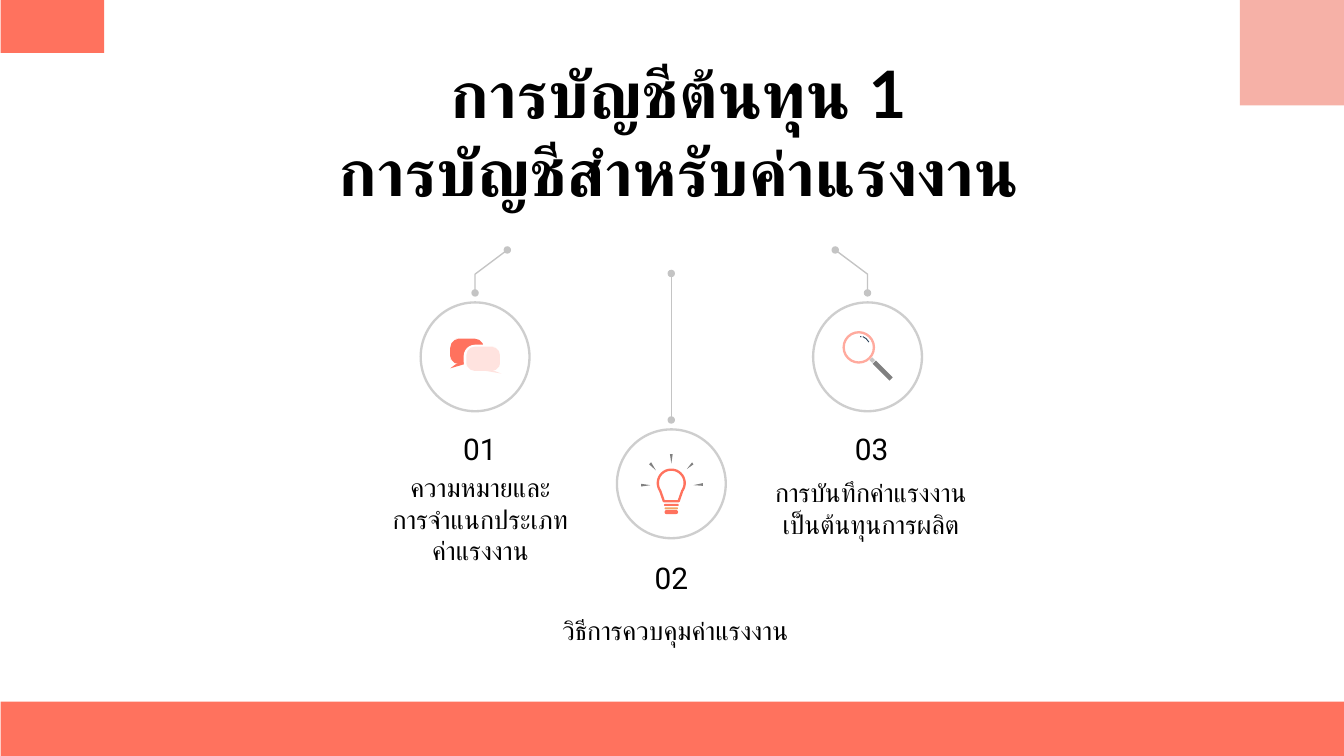
"""Build the labour-cost accounting title slide with its three numbered topics."""
import math
from lxml import etree
from pptx import Presentation
from pptx import util as u
from pptx.dml.color import RGBColor
from pptx.enum import shapes, text
from pptx.oxml.ns import qn

COLORS = {
    "coral": "FF725E", "blush": "F6B1A7", "pale": "FFE3DF", "rose": "FFAA9E",
    "amber": "F2A365", "ring": "CECECE", "leader": "C4C4C4", "gray": "808080",
    "navy": "30475E", "white": "FFFFFF", "black": "000000",
}
RGB = {name: RGBColor.from_string(value) for name, value in COLORS.items()}
KIND = shapes.MSO_SHAPE

prs = Presentation()
prs.slide_width = u.Inches(10)
prs.slide_height = prs.slide_width * 9 // 16
s = prs.slides.add_slide(prs.slide_layouts[6])
CELL = prs.slide_width / 1000


def grid(*cells):
    return [round(c * CELL) for c in cells]


def paint(sp, fill=None, line=None, width=1):
    sp.shadow.inherit = False
    if fill:
        sp.fill.solid()
        sp.fill.fore_color.rgb = RGB[fill]
    else:
        sp.fill.background()
    if line:
        sp.line.color.rgb = RGB[line]
        sp.line.width = u.Pt(width)
    else:
        sp.line.fill.background()
    return sp


for box, color in [
    ((0.5, 522, 1000, 40.5), "coral"),
    ((0.5, -0.5, 77, 40), "coral"),
    ((922.5, -0.5, 77.5, 79), "blush"),
]:
    paint(s.shapes.add_shape(KIND.RECTANGLE, *grid(*box)), color)

for box, words, font, size, bold in [
    ((82, 48, 846, 100), "การบัญชีต้นทุน 1\nการบัญชีสำหรับค่าแรงงาน", "Lato", 35, True),
    ((403, 415, 193, 29), "02", "Roboto", 16, False),
    ((406, 449.5, 193, 39), "วิธีการควบคุมค่าแรงงาน", "Roboto", 14, False),
    ((260.5, 319, 193, 29), "01", "Roboto", 16, False),
    ((261, 366.5, 193, 39), "ความหมายและ\nการจำแนกประเภทค่าแรงงาน", "Roboto", 14, False),
    ((552, 319, 193, 29), "03", "Roboto", 16, False),
    ((551.5, 358.5, 193, 39), "การบันทึกค่าแรงงานเป็นต้นทุนการผลิต", "Roboto", 14, False),
]:
    tf = s.shapes.add_textbox(*grid(*box)).text_frame
    tf.word_wrap = True
    tf.vertical_anchor = text.MSO_ANCHOR.MIDDLE
    tf.margin_left = tf.margin_right = tf.margin_top = tf.margin_bottom = u.Inches(0.1)
    p = tf.paragraphs[0]
    p.text = words
    p.alignment = text.PP_ALIGN.CENTER
    p.font.name, p.font.size, p.font.bold = font, u.Pt(size), bold
    p.font.color.rgb = RGB["black"]

lines = [
    ((648, 267), (650, 269), "leader", 2),
    ((650.5, 269.5), (663, 282), "gray", 2.5),
]
outlines = [
    ([(642, 250.5), (644.5, 252), (646.5, 254.5)], False, None, "navy", 0.5),
]
for i, (top, side) in enumerate([(224, 1), (318.5, 0), (224, -1)]):
    x = 353.5 + 146 * i
    paint(s.shapes.add_shape(KIND.OVAL, *grid(x - 40.5, top + 1, 81, 81)), "white", "ring", 1.25)
    start, end = (x + 24 * side, 186 if side else 203.5), (x, top - 6)
    for dot_x, dot_y in (start, end):
        paint(s.shapes.add_shape(KIND.OVAL, *grid(dot_x - 2.75, dot_y - 2.75, 5.5, 5.5)), "leader")
    if side:
        outlines.append(([start, (x, 204), end], False, None, "leader", 0.75))
    else:
        lines.append((start, end, "leader", 0.75))

bulb = [
    (499.5 + 10 * math.cos(math.radians(a)), 359.5 + 10 * math.sin(math.radians(a)))
    for a in range(145, 396, 10)
]
outlines.append((bulb + [(505, 373), (494, 373)], True, None, "coral", 1.25))
for ray in [
    [(498.5, 338), (500.5, 338), (499.5, 345)],
    [(483, 345.5), (484.5, 344), (488, 350)],
    [(477, 360), (477, 362), (484, 361)],
    [(523, 359.5), (523, 361.5), (516, 361)],
    [(515, 344), (516, 345.5), (511, 349)],
]:
    outlines.append((ray, True, "gray", None, 0))

for points, closed, fill, line, width in outlines:
    points = [grid(*point) for point in points]
    fb = s.shapes.build_freeform(*points[0])
    fb.add_line_segments(points[1:], close=closed)
    paint(fb.convert_to_shape(), fill, line, width)

for start, end, color, width in lines:
    sp = s.shapes.add_connector(shapes.MSO_CONNECTOR.STRAIGHT, *grid(*start, *end))
    sp.line.color.rgb = RGB[color]
    sp.line.width = u.Pt(width)
    etree.SubElement(sp._element.spPr, qn("a:effectLst"))

for kind, box, fill, line, width, adjust in [
    (KIND.OVAL, (627.75, 247.25, 22.5, 22.5), None, "rose", 1.25, ()),
    (KIND.OVAL, (640, 250, 1, 1), "navy", None, 0, ()),
    (KIND.ROUNDED_RECTANGLE, (494, 375, 11, 1.5), "coral", None, 0, (0.5,)),
    (KIND.ROUNDED_RECTANGLE, (494.5, 377.5, 10, 1.5), "amber", None, 0, (0.5,)),
    (KIND.ROUNDED_RECTANGLE, (495, 380, 9, 2), "coral", "coral", 0.75, (0.5,)),
    (KIND.ROUNDED_RECTANGULAR_CALLOUT, (335, 252, 25, 19), "coral", None, 0, (-0.5, 0.66, 0.35)),
    (KIND.ROUNDED_RECTANGLE, (345, 256.5, 28, 21), "white", None, 0, (0.4,)),
    (KIND.ROUNDED_RECTANGULAR_CALLOUT, (347, 258, 25, 18), "pale", None, 0, (0.54, 0.61, 0.35)),
]:
    sp = paint(s.shapes.add_shape(kind, *grid(*box)), fill, line, width)
    for i, value in enumerate(adjust):
        sp.adjustments[i] = value

prs.save("out.pptx")
